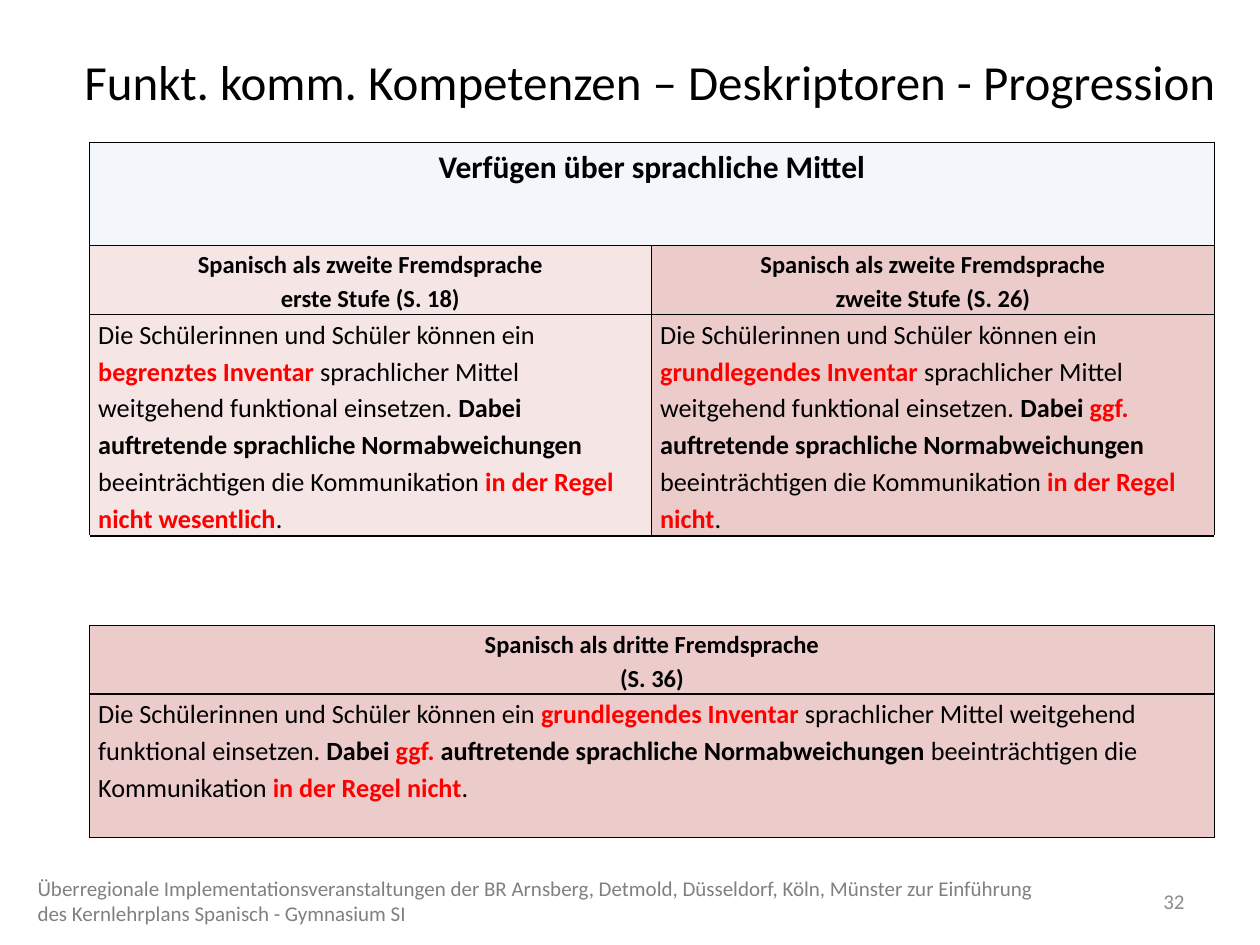
from lxml import etree
from pptx import Presentation
from pptx.dml.color import RGBColor
from pptx.enum.text import MSO_ANCHOR, PP_ALIGN
from pptx.oxml.ns import qn
from pptx.util import Inches, Pt

LEFT, CENTER, RIGHT = PP_ALIGN.LEFT, PP_ALIGN.CENTER, PP_ALIGN.RIGHT
TOP, MIDDLE = MSO_ANCHOR.TOP, MSO_ANCHOR.MIDDLE
COLORS = {"black": "000000", "red": "FF0000", "grey": "808080", "number": "8C8C8C",
          "blue": "DCE6F2", "light": "F2DCDB", "rose": "E6B9B8"}


def write(frame, paragraphs, size, align=LEFT, spacing=1.0):
    """Each paragraph is a list of (text, bold, color) spans."""
    frame.word_wrap = True
    for index, spans in enumerate(paragraphs):
        para = frame.paragraphs[0] if index == 0 else frame.add_paragraph()
        para.alignment = align
        para.line_spacing = spacing
        for text, bold, color in spans:
            span = para.add_run()
            span.text = text
            formats = {"name": "Calibri", "size": Pt(size), "bold": bold}
            for name, value in formats.items():
                setattr(span.font, name, value)
            span.font.color.rgb = RGBColor.from_string(COLORS[color])


def add_borders(cell, sides):
    properties = cell._tc.get_or_add_tcPr()
    for side in sides:
        line = etree.SubElement(properties, qn(f"a:ln{side}"), w=str(Pt(1)))
        fill = etree.SubElement(line, qn("a:solidFill"))
        etree.SubElement(fill, qn("a:srgbClr"), val=COLORS["black"])


deck = Presentation()
deck.slide_width, deck.slide_height = Inches(10), Inches(7.5)
page = deck.slides.add_slide(deck.slide_layouts[5])

# Title
title = page.shapes.title
title.left, title.top = Inches(0.57), Inches(0.36)
title.width, title.height = Inches(9.21), Inches(0.57)
title.text_frame.vertical_anchor = TOP
write(title.text_frame,
      [[("Funkt. komm. Kompetenzen – Deskriptoren - Progression", False, "black")]], 28)

# Descriptor texts: the second stage and the third language share one wording
start = [("Die Schülerinnen und Schüler können ein ", False, "black")]
middle = [("sprachlicher Mittel weitgehend funktional einsetzen. ", False, "black"),
          ("Dabei ", True, "black")]
deviations = [("auftretende sprachliche Normabweichungen ", True, "black"),
              ("beeinträchtigen die Kommunikation ", False, "black")]
end = [(".", False, "black")]
limited = (start + [("begrenztes Inventar ", True, "red")] + middle + deviations
           + [("in der Regel nicht wesentlich", True, "red")] + end)
basic = (start + [("grundlegendes Inventar ", True, "red")] + middle
         + [("ggf. ", True, "red")] + deviations
         + [("in der Regel nicht", True, "red")] + end)

# Table grid
widths = [4.46, 4.47]
heights = [0.82, 0.54, 1.72, 0.71, 0.54, 1.14]
table = page.shapes.add_table(len(heights), len(widths), Inches(0.71), Inches(1.13),
                              Inches(sum(widths)), Inches(sum(heights))).table
table.first_row = table.horz_banding = False
for column, width in zip(table.columns, widths):
    column.width = Inches(width)
for row, height in zip(table.rows, heights):
    row.height = Inches(height)

# Borders, with the gap row open at its sides
GAP_ROW = 3
for row_index, row in enumerate(table.rows):
    for cell in row.cells:
        add_borders(cell, "TB" if row_index == GAP_ROW else "LRTB")
        cell.fill.background()
for row_index in (0, 3, 4, 5):
    table.cell(row_index, 0).merge(table.cell(row_index, 1))

# Cell contents: row, column, paragraphs, size, alignment, fill, opacity in percent
second = "Spanisch als zweite Fremdsprache"
headings = [
    (0, 0, ["Verfügen über sprachliche Mittel"], 18, "blue", 32),
    (1, 0, [second, "erste Stufe (S. 18)"], 14, "light", 73),
    (1, 1, [second, "zweite Stufe (S. 26)"], 14, "rose", 73),
    (4, 0, ["Spanisch als dritte Fremdsprache", "(S. 36)"], 14, "rose", 73),
]
contents = [(row, column, [[(line, True, "black")] for line in lines], size, CENTER, fill, opacity)
            for row, column, lines, size, fill, opacity in headings]
contents += [(row, column, [spans], 15, LEFT, fill, 73) for row, column, spans, fill in
             [(2, 0, limited, "light"), (2, 1, basic, "rose"), (5, 0, basic, "rose")]]
for row, column, paragraphs, size, align, fill, opacity in contents:
    cell = table.cell(row, column)
    cell.margin_left = cell.margin_right = Inches(0.07)
    cell.margin_top = cell.margin_bottom = 0
    write(cell.text_frame, paragraphs, size, align, 1.15)
    cell.fill.solid()
    cell.fill.fore_color.rgb = RGBColor.from_string(COLORS[fill])
    shade = cell._tc.tcPr.find(qn("a:solidFill")).find(qn("a:srgbClr"))
    etree.SubElement(shade, qn("a:alpha"), val=str(opacity * 1000))
table.cell(0, 0).text_frame.paragraphs[0].space_after = Pt(10)

# Footer and page number
footer = ("Überregionale Implementationsveranstaltungen der BR Arnsberg, Detmold, Düsseldorf, "
          "Köln, Münster zur Einführung des Kernlehrplans Spanisch - Gymnasium SI")
for left, width, text, align, color in [(0.2, 8.27, footer, LEFT, "grey"),
                                        (8.86, 0.64, "32", RIGHT, "number")]:
    box = page.shapes.add_textbox(Inches(left), Inches(6.95), Inches(width), Inches(0.4))
    box.text_frame.vertical_anchor = MIDDLE
    write(box.text_frame, [[(text, False, color)]], 12, align)

deck.save("out.pptx")
